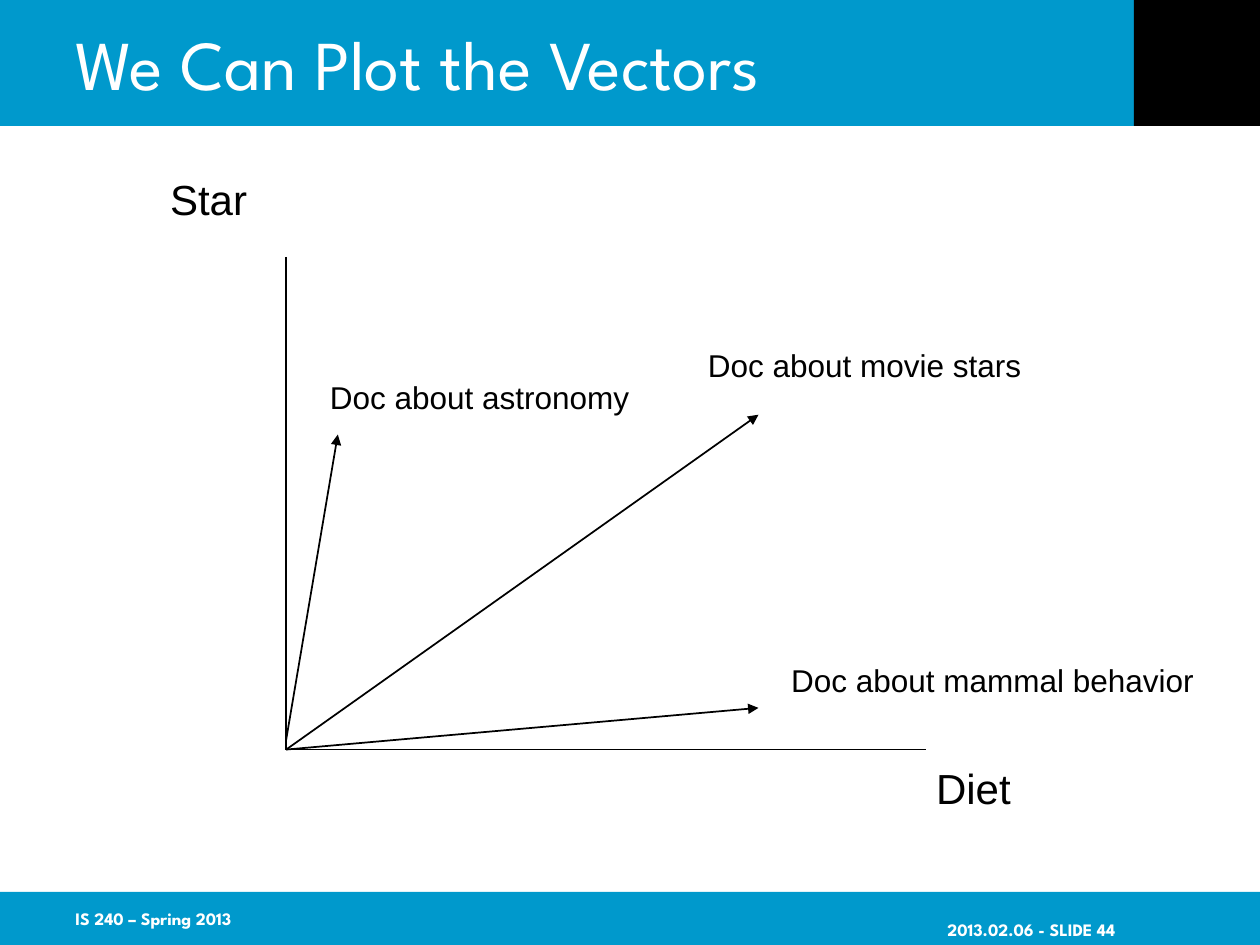
from dataclasses import dataclass

from lxml.etree import SubElement
from pptx import Presentation
from pptx.dml.color import RGBColor
from pptx.enum.shapes import MSO_CONNECTOR, MSO_SHAPE
from pptx.enum.text import MSO_ANCHOR, MSO_AUTO_SIZE, PP_ALIGN
from pptx.oxml.ns import qn
from pptx.slide import Slide
from pptx.util import Cm, Pt

BLUE, BLACK, WHITE = "0099CC", "000000", "FFFFFF"
BRAND, PLAIN = "League Spartan", "Arial"
ORIGIN = (5.77, 15.11)


@dataclass
class Bar:
    """A filled band, in centimetres."""
    left: float
    top: float
    width: float
    height: float
    fill: str


@dataclass
class Label:
    """A line of text in a box, in centimetres and points."""
    text: str
    left: float
    top: float
    width: float
    height: float
    size: int
    font: str = PLAIN
    color: str = BLACK
    bold: bool = False
    right: bool = False


@dataclass
class Line:
    """A straight line between two points, in centimetres."""
    start: tuple[float, float]
    end: tuple[float, float]
    arrow: bool = False


BARS = [
    Bar(0, 0, 25.4, 2.54, BLUE),
    Bar(0, 17.98, 25.4, 1.07, BLUE),
    Bar(22.86, 0, 2.54, 2.54, BLACK),
]
LINES = [
    Line((5.77, 5.18), ORIGIN),
    Line(ORIGIN, (18.67, 15.11)),
    Line((5.77, 14.91), (6.81, 8.76), True),
    Line(ORIGIN, (15.29, 14.27), True),
    Line(ORIGIN, (15.29, 8.36), True),
]
LABELS = [
    Label("We Can Plot the Vectors", 1.27, 0, 21.59, 2.54, 40, BRAND, WHITE),
    Label("IS 240 – Spring 2013", 1.27, 17.98, 5.28, 1.07, 10, BRAND, WHITE, True),
    Label("2013.02.06 - SLIDE 44", 17.2, 18.44, 5.28, 0.61, 10, BRAND, WHITE, True, True),
    Label("Star", 3.18, 3.38, 2.06, 1.27, 24),
    Label("Diet", 18.62, 15.24, 2.03, 1.27, 24),
    Label("Doc about astronomy", 6.4, 7.49, 6.55, 1.02, 18),
    Label("Doc about movie stars", 14.02, 6.86, 6.83, 1.02, 18),
    Label("Doc about mammal behavior", 15.7, 13.21, 8.64, 1.02, 18),
]


def paint(color, code: str) -> None:
    """Set a colour format from a hex string."""
    color.rgb = RGBColor.from_string(code)


def draw_bar(slide: Slide, bar: Bar) -> None:
    """Draw one filled band without an outline."""
    shape = slide.shapes.add_shape(
        MSO_SHAPE.RECTANGLE, Cm(bar.left), Cm(bar.top), Cm(bar.width), Cm(bar.height))
    shape.shadow.inherit = False
    shape.fill.solid()
    paint(shape.fill.fore_color, bar.fill)
    shape.line.fill.background()


def draw_line(slide: Slide, line: Line) -> None:
    """Draw one axis or vector."""
    link = slide.shapes.add_connector(
        MSO_CONNECTOR.STRAIGHT, *map(Cm, line.start + line.end))
    link.line.width = Pt(1)
    paint(link.line.color, BLACK)
    if line.arrow:
        SubElement(link.line._get_or_add_ln(), qn("a:tailEnd"), type="triangle")
    SubElement(link._element.spPr, qn("a:effectLst"))


def draw_label(slide: Slide, label: Label) -> None:
    """Draw one line of text."""
    box = slide.shapes.add_textbox(
        Cm(label.left), Cm(label.top), Cm(label.width), Cm(label.height))
    frame = box.text_frame
    if label.font == BRAND:
        frame.word_wrap = True
        frame.vertical_anchor = MSO_ANCHOR.MIDDLE
    else:
        frame.word_wrap = False
        frame.auto_size = MSO_AUTO_SIZE.SHAPE_TO_FIT_TEXT
    para = frame.paragraphs[0]
    if label.right:
        frame.margin_right = 0
        para.alignment = PP_ALIGN.RIGHT
    run = para.add_run()
    run.text = label.text
    run.font.name = label.font
    run.font.size = Pt(label.size)
    run.font.bold = label.bold
    paint(run.font.color, label.color)


def main() -> None:
    """Build the slide and save it."""
    deck = Presentation()
    deck.slide_width, deck.slide_height = Cm(25.4), Cm(19.05)
    slide = deck.slides.add_slide(deck.slide_layouts[6])
    for bar in BARS:
        draw_bar(slide, bar)
    for line in LINES:
        draw_line(slide, line)
    for label in LABELS:
        draw_label(slide, label)
    deck.save("out.pptx")


if __name__ == "__main__":
    main()
